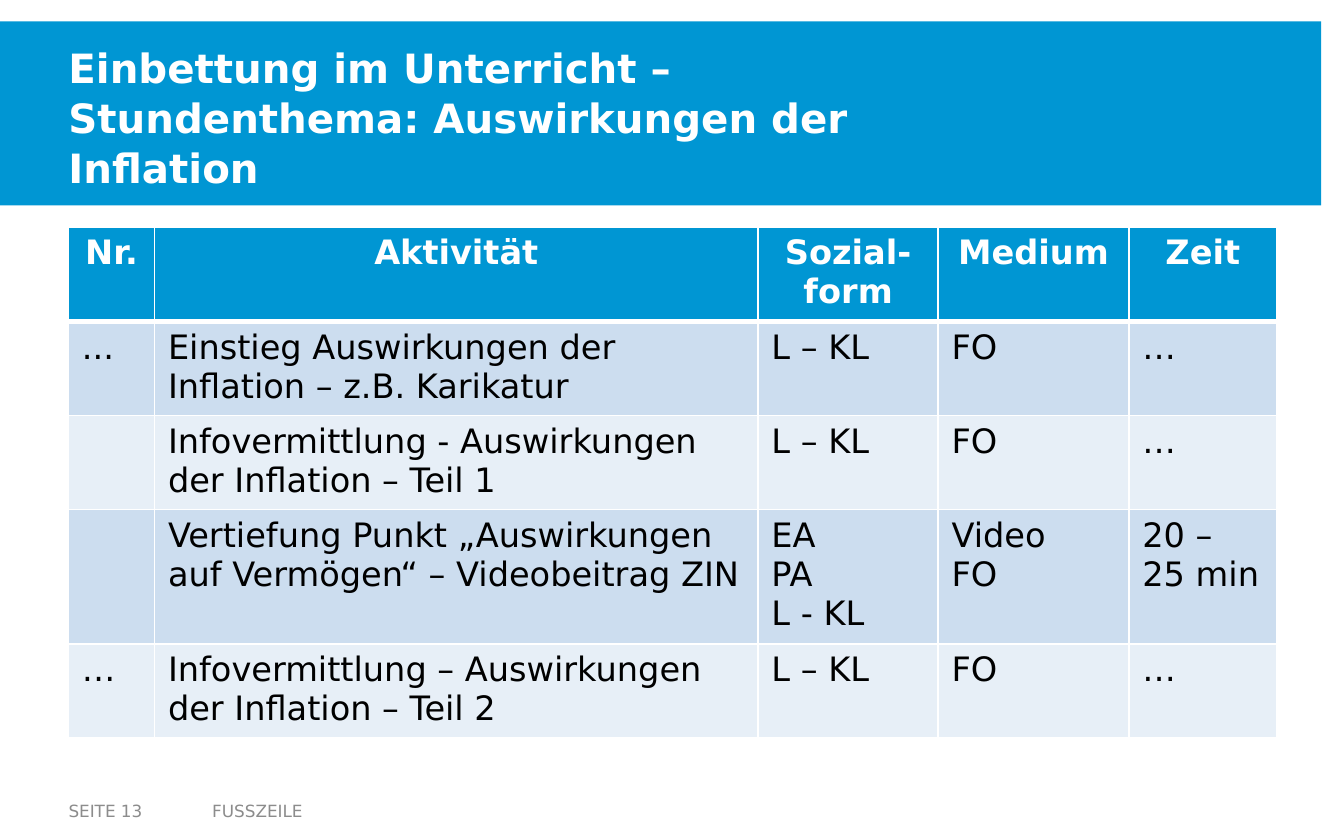
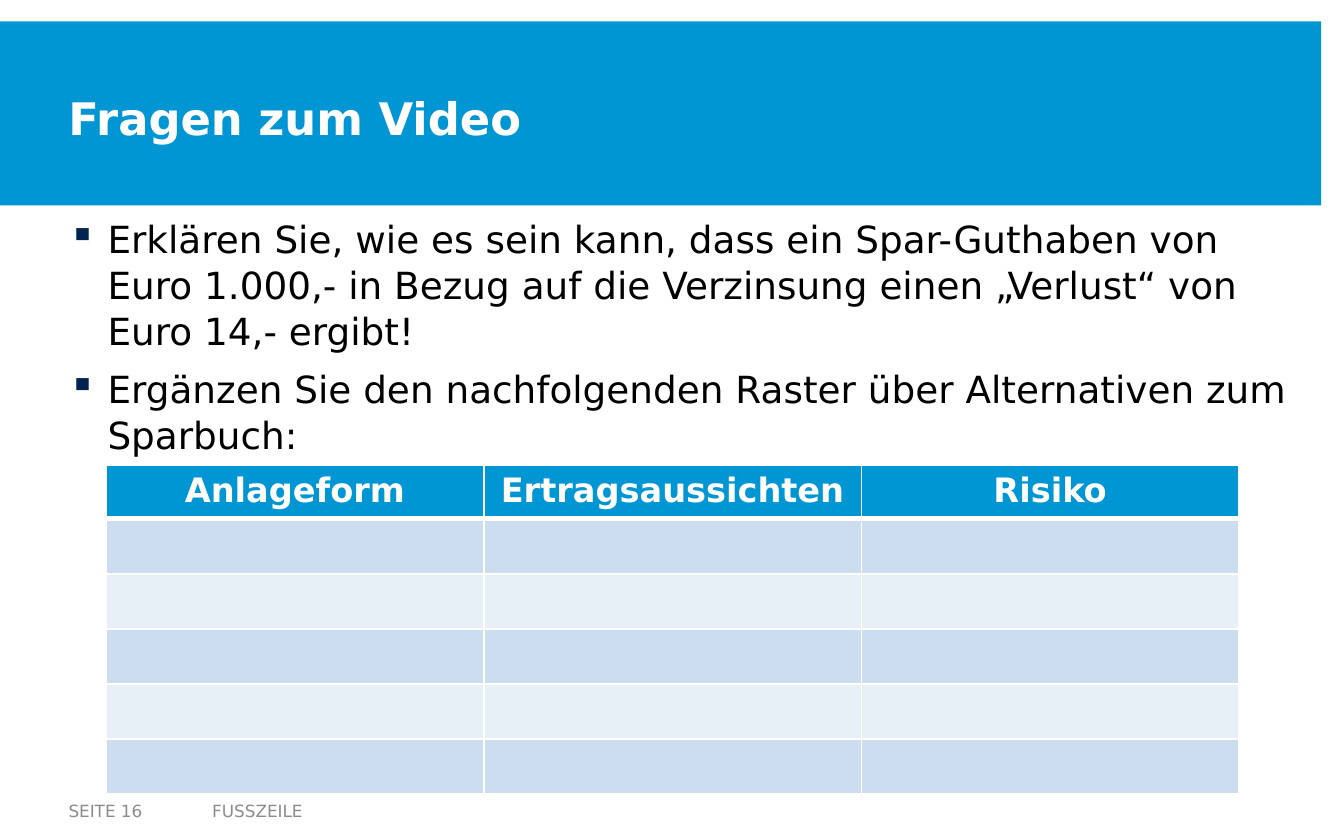
from dataclasses import dataclass

from lxml import etree
from pptx import Presentation
from pptx.dml.color import RGBColor
from pptx.enum import shapes, text
from pptx.oxml import ns
from pptx.util import Pt


@dataclass(frozen=True)
class Theme:
    font: str = "DejaVu Sans"
    blue: str = "0096D3"
    navy: str = "002350"
    white: str = "FFFFFF"
    black: str = "000000"
    grey: str = "8C8C8C"
    stripes: tuple[str, str] = ("CCDDEF", "E7EFF7")
    title_size: float = 24
    long_title_size: float = 21.6
    body_size: float = 20
    table_size: float = 18
    footer_size: float = 9
    line_spacing: float = 1.03
    thin_rule: float = 1
    header_rule: float = 3


@dataclass(frozen=True)
class Area:
    left: float
    top: float
    width: float
    height: float

    def points(self) -> tuple[int, int, int, int]:
        return Pt(self.left), Pt(self.top), Pt(self.width), Pt(self.height)


@dataclass(frozen=True)
class TextStyle:
    size: float
    color: str
    bold: bool = False


@dataclass(frozen=True)
class Grid:
    left: float
    top: float
    columns: list[float]
    row_heights: list[float]
    rows: list[list[str]]


THEME = Theme()
MARGIN = 36.7
BAND = Area(0, 11.5, 707.8, 98.6)
TITLE = Area(MARGIN, 25.2, 494.6, 74.9)
BODY = Area(MARGIN, 111.6, 663.8, 298)
FOOTER = Area(106.6, 422.6, 253.4, 23.8)
PAGE_NUMBER = Area(MARGIN, 422.6, 70.6, 23.8)
BULLET_INDENT = 20.9

FOOTER_STYLE = TextStyle(THEME.footer_size, THEME.grey)
BODY_STYLE = TextStyle(THEME.body_size, THEME.black)
HEADER_STYLE = TextStyle(THEME.table_size, THEME.white, bold=True)
CELL_STYLE = TextStyle(THEME.table_size, THEME.black)

LESSON_PLAN = Grid(
    MARGIN, 121.7, [46.1, 323.3, 96.5, 102.2, 79.2], [48.2] * 5,
    [
        ["Nr.", "Aktivität", "Sozial-form", "Medium", "Zeit"],
        ["...", "Einstieg Auswirkungen der Inflation – z.B. Karikatur", "L – KL", "FO", "…"],
        ["", "Infovermittlung - Auswirkungen der Inflation – Teil 1", "L – KL", "FO", "…"],
        ["", "Vertiefung Punkt „Auswirkungen auf Vermögen“ – Videobeitrag ZIN",
         "EA\nPA\nL - KL", "Video\nFO", "20 – 25 min"],
        ["…", "Infovermittlung – Auswirkungen der Inflation – Teil 2", "L – KL", "FO", "…"],
    ],
)
INVESTMENTS = Grid(
    56.9, 249.1, [202.3] * 3, [18] + [29.5] * 5,
    [["Anlageform", "Ertragsaussichten", "Risiko"]] + [[""] * 3] * 5,
)
QUESTIONS = [
    "Erklären Sie, wie es sein kann, dass ein Spar-Guthaben von Euro 1.000,- "
    "in Bezug auf die Verzinsung einen „Verlust“ von Euro 14,- ergibt!",
    "Ergänzen Sie den nachfolgenden Raster über Alternativen zum Sparbuch:",
]


def rgb(color: str) -> RGBColor:
    return RGBColor.from_string(color)


def style_paragraph(para, style: TextStyle) -> None:
    font = para.font
    font.name = THEME.font
    font.size = Pt(style.size)
    font.bold = style.bold
    font.color.rgb = rgb(style.color)


def add_text(page, area: Area, words: str, style: TextStyle,
             inset_x: float = 0, inset_y: float = 0,
             anchor: text.MSO_ANCHOR = text.MSO_ANCHOR.MIDDLE):
    """Add a wrapped text box and return its text frame."""
    frame = page.shapes.add_textbox(*area.points()).text_frame
    frame.word_wrap = True
    frame.vertical_anchor = anchor
    frame.margin_left = frame.margin_right = Pt(inset_x)
    frame.margin_top = frame.margin_bottom = Pt(inset_y)
    frame.text = words
    for para in frame.paragraphs:
        style_paragraph(para, style)
    return frame


def add_page(deck, title: str, number: int, title_size: float = THEME.title_size):
    """Add a slide with the blue title band and the footer line."""
    page = deck.slides.add_slide(deck.slide_layouts[6])
    band = page.shapes.add_shape(shapes.MSO_SHAPE.RECTANGLE, *BAND.points())
    band.shadow.inherit = False
    band.fill.solid()
    band.fill.fore_color.rgb = rgb(THEME.blue)
    band.line.fill.background()
    heading = add_text(page, TITLE, title, TextStyle(title_size, THEME.white, bold=True))
    heading.paragraphs[0].line_spacing = THEME.line_spacing
    add_text(page, FOOTER, "FUSSZEILE", FOOTER_STYLE, inset_x=7.2, inset_y=3.6)
    add_text(page, PAGE_NUMBER, f"SEITE {number}", FOOTER_STYLE, inset_y=3.6)
    return page


def add_bullet(para) -> None:
    properties = para._p.get_or_add_pPr()
    properties.set("marL", str(Pt(BULLET_INDENT)))
    properties.set("indent", str(-Pt(BULLET_INDENT)))
    color = etree.SubElement(properties, ns.qn("a:buClr"))
    etree.SubElement(color, ns.qn("a:srgbClr"), val=THEME.navy)
    etree.SubElement(properties, ns.qn("a:buChar"), char="▪")


def add_questions(page, questions: list[str]) -> None:
    frame = add_text(page, BODY, "", BODY_STYLE, inset_y=3.6, anchor=text.MSO_ANCHOR.TOP)
    frame.clear()
    for index, question in enumerate(questions):
        para = frame.add_paragraph() if index else frame.paragraphs[0]
        para.text = question
        if para._p.pPr is not None:
            para._p.remove(para._p.pPr)
        add_bullet(para)
        para.space_after = Pt(6)
        para.line_spacing = THEME.line_spacing
        style_paragraph(para, BODY_STYLE)


def set_borders(cell, row: int) -> None:
    """Draw white rules, with a heavier one between header and body."""
    top = THEME.header_rule if row == 1 else THEME.thin_rule
    bottom = THEME.header_rule if row == 0 else THEME.thin_rule
    widths = {"L": THEME.thin_rule, "R": THEME.thin_rule, "T": top, "B": bottom}
    properties = cell._tc.get_or_add_tcPr()
    for side, width in widths.items():
        rule = etree.SubElement(properties, ns.qn(f"a:ln{side}"), w=str(Pt(width)))
        fill = etree.SubElement(rule, ns.qn("a:solidFill"))
        etree.SubElement(fill, ns.qn("a:srgbClr"), val=THEME.white)


def add_grid(page, grid: Grid) -> None:
    area = Area(grid.left, grid.top, sum(grid.columns), sum(grid.row_heights))
    table = page.shapes.add_table(
        len(grid.rows), len(grid.columns), *area.points()).table
    for column, width in zip(table.columns, grid.columns):
        column.width = Pt(width)
    for row, (words, height) in enumerate(zip(grid.rows, grid.row_heights)):
        table.rows[row].height = Pt(height)
        is_header = row == 0
        for column, entry in enumerate(words):
            cell = table.cell(row, column)
            set_borders(cell, row)
            cell.fill.solid()
            cell.fill.fore_color.rgb = rgb(
                THEME.blue if is_header else THEME.stripes[(row - 1) % 2])
            cell.text = entry
            for para in cell.text_frame.paragraphs:
                if is_header:
                    para.alignment = text.PP_ALIGN.CENTER
                style_paragraph(para, HEADER_STYLE if is_header else CELL_STYLE)


def main() -> None:
    deck = Presentation()
    deck.slide_width, deck.slide_height = Pt(720), Pt(450)

    plan = add_page(
        deck, "Einbettung im Unterricht – Stundenthema: Auswirkungen der Inflation",
        13, THEME.long_title_size)
    add_grid(plan, LESSON_PLAN)

    video = add_page(deck, "Fragen zum Video", 16)
    add_questions(video, QUESTIONS)
    add_grid(video, INVESTMENTS)

    deck.save("out.pptx")


if __name__ == "__main__":
    main()
